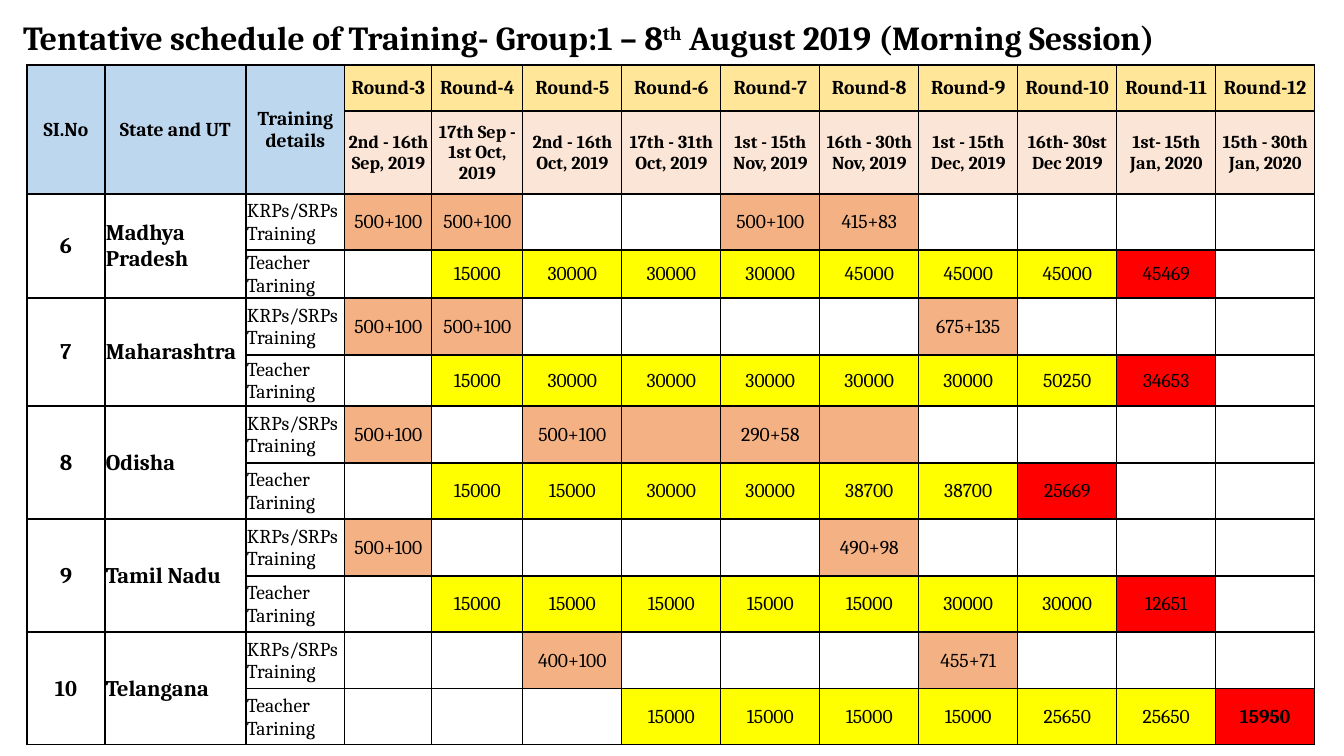
"""Builds the training schedule slide for the morning session of Group 1."""
import lxml.etree
import pptx
import pptx.dml.color
import pptx.enum.text
import pptx.oxml
import pptx.oxml.ns
import pptx.util

PX = 12192000 / 1344
FONT = "Cambria"
BLACK = "000000"
BLUE, GOLD, PEACH = "BDD7EE", "FFE699", "FBE5D6"
ORANGE, YELLOW, RED = "F4B183", "FFFF00", "FF0000"
LEFT = pptx.enum.text.PP_ALIGN.LEFT
CENTER = pptx.enum.text.PP_ALIGN.CENTER
MIDDLE = pptx.enum.text.MSO_ANCHOR.MIDDLE

FIRST_ROUND = 3
LABEL_COLUMNS = 3
HEADINGS = ["SI.No", "State and UT", "Training details"]
DATES = [
    "2nd - 16th Sep, 2019", "17th Sep - 1st Oct, 2019", "2nd - 16th Oct, 2019",
    "17th - 31th Oct, 2019", "1st - 15th Nov, 2019", "16th - 30th Nov, 2019",
    "1st - 15th Dec, 2019", "16th- 30st Dec 2019", "1st- 15th Jan, 2020",
    "15th - 30th Jan, 2020",
]
FIRST_STATE_NUMBER = 6
STATES = [
    ("Madhya Pradesh",
     {3: "500+100", 4: "500+100", 7: "500+100", 8: "415+83"},
     4, [15000, 30000, 30000, 30000, 45000, 45000, 45000, 45469]),
    ("Maharashtra",
     {3: "500+100", 4: "500+100", 9: "675+135"},
     4, [15000, 30000, 30000, 30000, 30000, 30000, 50250, 34653]),
    ("Odisha",
     {3: "500+100", 5: "500+100", 6: "", 7: "290+58", 8: ""},
     4, [15000, 15000, 30000, 30000, 38700, 38700, 25669]),
    ("Tamil Nadu",
     {3: "500+100", 8: "490+98"},
     4, [15000, 15000, 15000, 15000, 15000, 30000, 30000, 12651]),
    ("Telangana",
     {5: "400+100", 9: "455+71"},
     6, [15000, 15000, 15000, 15000, 25650, 25650, 15950]),
]
COLUMN_WIDTHS = [78, 141, 99, 87, 91] + [99] * 8
ROW_HEIGHTS = [46, 83, 56, 48, 57, 51] + [57, 56] * 3


def px(length):
    """Turn a length in px into EMU."""
    return pptx.util.Emu(round(length * PX))


def colour(hex_code):
    """Turn a hex string into a colour."""
    return pptx.dml.color.RGBColor.from_string(hex_code)


def add_text(paragraph, text, size=14, bold=False, align=CENTER, baseline=0):
    """Add a formatted run to a paragraph."""
    paragraph.alignment = align
    run = paragraph.add_run()
    run.text = text
    run.font.name = FONT
    run.font.size = pptx.util.Pt(size)
    run.font.bold = bold
    run.font.color.rgb = colour(BLACK)
    if baseline:
        run.font._element.set("baseline", str(baseline * 1000))


class ScheduleSlide:
    """Holds the current slide and the style of its title and table."""

    def __init__(self, presentation):
        """Add a title-only slide."""
        self.slide = presentation.slides.add_slide(presentation.slide_layouts[5])
        self.border_width = pptx.util.Pt(1)

    def title(self, left, top, width, height, parts):
        """Place the title and fill it with (text, baseline) parts."""
        title = self.slide.shapes.title
        title.left, title.top = px(left), px(top)
        title.width, title.height = px(width), px(height)
        frame = title.text_frame
        frame.word_wrap = True
        frame.auto_size = pptx.enum.text.MSO_AUTO_SIZE.NONE
        frame.vertical_anchor = MIDDLE
        heading = frame.paragraphs[0]
        heading.line_spacing = 0.9
        for text, baseline in parts:
            add_text(heading, text, size=24, bold=True, align=LEFT, baseline=baseline)

    def table(self, left, top, widths, heights):
        """Add an empty table with plain bordered cells."""
        frame = self.slide.shapes.add_table(
            len(heights), len(widths), px(left), px(top),
            px(sum(widths)), px(sum(heights)))
        self.schedule = frame.table
        self.schedule.first_row = False
        self.schedule.horz_banding = False
        for column, width in zip(self.schedule.columns, widths):
            column.width = px(width)
        for row, height in zip(self.schedule.rows, heights):
            row.height = px(height)
        for cell in self.schedule.iter_cells():
            cell.margin_left = cell.margin_right = cell.margin_top = px(1)
            cell.margin_bottom = 0
            cell.vertical_anchor = MIDDLE
            self.border(cell)
            cell.fill.background()

    def border(self, cell):
        """Draw a black line on each side of a cell."""
        properties = cell._tc.get_or_add_tcPr()
        for side in ("a:lnL", "a:lnR", "a:lnT", "a:lnB"):
            line = lxml.etree.SubElement(properties, pptx.oxml.ns.qn(side))
            line.set("w", str(self.border_width))
            solid = lxml.etree.SubElement(line, pptx.oxml.ns.qn("a:solidFill"))
            lxml.etree.SubElement(solid, pptx.oxml.ns.qn("a:srgbClr")).set("val", BLACK)

    def cell(self, row, column, text, fill=None, rows=1, **text_format):
        """Fill one cell, merged downwards over the given rows."""
        cell = self.schedule.cell(row, column)
        if rows > 1:
            cell.merge(self.schedule.cell(row + rows - 1, column))
        if fill:
            cell.fill.solid()
            cell.fill.fore_color.rgb = colour(fill)
        if text:
            add_text(cell.text_frame.paragraphs[0], text, **text_format)

    def header(self):
        """Fill the headings, the rounds and their dates."""
        for column, heading in enumerate(HEADINGS):
            self.cell(0, column, heading, BLUE, rows=2, bold=True)
        for index, dates in enumerate(DATES):
            column = LABEL_COLUMNS + index
            self.cell(0, column, f"Round-{FIRST_ROUND + index}", GOLD, bold=True)
            self.cell(1, column, dates, PEACH, size=13, bold=True)

    def state(self, index, name, resource_persons, first_round, teachers):
        """Fill the two rows of one state."""
        row = 2 + 2 * index
        offset = LABEL_COLUMNS - FIRST_ROUND
        self.cell(row, 0, str(FIRST_STATE_NUMBER + index), rows=2, size=16, bold=True)
        self.cell(row, 1, name, rows=2, size=16, bold=True, align=LEFT)
        self.cell(row, 2, "KRPs/SRPs Training", align=LEFT)
        self.cell(row + 1, 2, "Teacher Tarining", align=LEFT)
        for round_number, count in resource_persons.items():
            self.cell(row, round_number + offset, count, ORANGE)
        last_round = first_round + len(teachers) - 1
        final_round = FIRST_ROUND + len(DATES) - 1
        for round_number, count in enumerate(teachers, first_round):
            fill = RED if round_number == last_round else YELLOW
            self.cell(row + 1, round_number + offset, str(count), fill,
                      bold=round_number == final_round)


def main():
    """Build and save the slide."""
    presentation = pptx.Presentation()
    presentation.slide_width, presentation.slide_height = px(1344), px(756)
    page = ScheduleSlide(presentation)
    page.title(13, 5, 1303, 69, [
        ("Tentative schedule of Training- Group:1 – 8", 0),
        ("th", 30),
        (" August 2019 (Morning Session)", 0),
    ])
    page.table(27, 65, COLUMN_WIDTHS, ROW_HEIGHTS)
    page.header()
    for index, state in enumerate(STATES):
        page.state(index, *state)
    presentation.save("out.pptx")


if __name__ == "__main__":
    main()
